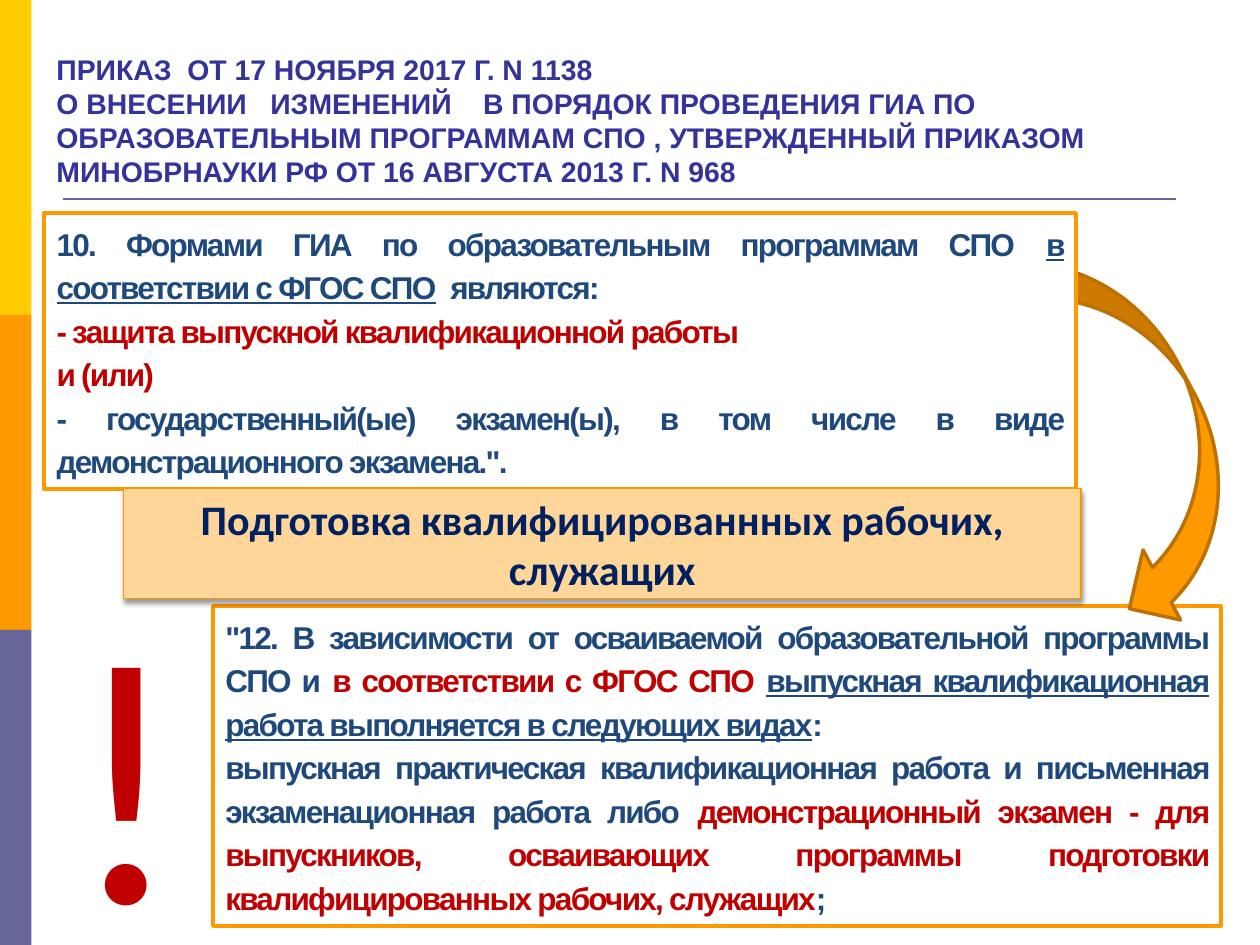
from lxml import etree
from pptx import Presentation
from pptx.dml.color import RGBColor
from pptx.enum.shapes import MSO_CONNECTOR, MSO_SHAPE
from pptx.enum.text import MSO_ANCHOR, PP_ALIGN
from pptx.oxml import parse_xml
from pptx.oxml.ns import nsdecls, qn
from pptx.util import Inches, Pt

BLUE, RED, ORANGE = "1F497D", "C00000", "FF9900"


def rgb(color):
    """Turn a hex string into a colour."""
    return RGBColor.from_string(color)


def add_box(s, box, fill, line=None, width=2, kind=MSO_SHAPE.RECTANGLE):
    """Add a filled preset shape without a shadow."""
    sp = s.shapes.add_shape(kind, *map(Inches, box))
    sp.shadow.inherit = False
    sp.fill.solid()
    sp.fill.fore_color.rgb = rgb(fill)
    if line:
        sp.line.color.rgb = rgb(line)
        sp.line.width = Pt(width)
    else:
        sp.line.fill.background()
    return sp


def add_run(p, text, size, color, font="Arial", bold=True, underline=False, spacing=0):
    """Add one formatted run to a paragraph."""
    r = p.add_run()
    r.text = text
    f = r.font
    f.name, f.size, f.bold = font, Pt(size), bold
    f.color.rgb = rgb(color)
    if underline:
        f.underline = True
    if spacing:
        r._r.get_or_add_rPr().set("spc", str(spacing * 100))


def add_text(s, box, anchor):
    """Add a wrapping text box and return its text frame."""
    tf = s.shapes.add_textbox(*map(Inches, box)).text_frame
    tf.word_wrap = True
    tf.vertical_anchor = anchor
    return tf


def add_sidebar(s, box, colors):
    """Stack equal colour bands in the box."""
    left, top, width, height = box
    step = height / len(colors)
    for i, color in enumerate(colors):
        add_box(s, (left, top + i * step, width, step), color)


def add_title(s, box, lines):
    """Add the heading and the rule below it."""
    ends = map(Inches, (0.5, 1.58, 9.33, 1.58))
    rule = s.shapes.add_connector(MSO_CONNECTOR.STRAIGHT, *ends)
    rule.line.color.rgb = rgb("666699")
    rule.line.width = Pt(1.5)
    etree.SubElement(rule._element.spPr, qn("a:effectLst"))
    p = add_text(s, box, MSO_ANCHOR.BOTTOM).paragraphs[0]
    for i, line in enumerate(lines):
        if i:
            p.add_line_break()
        add_run(p, line, 16.2, "333399")


def add_clause(s, box, paragraphs):
    """Add a framed clause with justified paragraphs of (text, colour, underline) runs."""
    tf = add_box(s, box, "FFFFFF", ORANGE).text_frame
    tf.word_wrap = True
    tf.vertical_anchor = MSO_ANCHOR.TOP
    for i, runs in enumerate(paragraphs):
        p = tf.add_paragraph() if i else tf.paragraphs[0]
        p.alignment = PP_ALIGN.JUSTIFY
        p.line_spacing = 1.15
        for text, color, underline in runs:
            add_run(p, text, 18, color, underline=underline, spacing=-1)


def add_arrow(s, box):
    """Add the curved arrow that joins the two clauses."""
    sp = add_box(s, box, ORANGE, "BD7100", kind=MSO_SHAPE.CURVED_DOWN_ARROW)
    sp.rotation = 61.8


def add_banner(s, box, text):
    """Add the shaded banner with a soft shadow."""
    sp = add_box(s, box, "FFD699", "F99600", 0.75)
    sp._element.spPr.find(qn("a:effectLst")).append(parse_xml(
        f'<a:outerShdw {nsdecls("a")} blurRad="{Pt(3.1)}" dist="{Pt(1.6)}" dir="5400000" '
        'rotWithShape="0"><a:srgbClr val="000000"><a:alpha val="38000"/></a:srgbClr>'
        '</a:outerShdw>'))
    tf = sp.text_frame
    tf.word_wrap = True
    tf.vertical_anchor = MSO_ANCHOR.MIDDLE
    p = tf.paragraphs[0]
    p.alignment = PP_ALIGN.CENTER
    add_run(p, text, 24, "002060", "Calibri")


def add_mark(s, box):
    """Add the large exclamation mark."""
    p = add_text(s, box, MSO_ANCHOR.MIDDLE).paragraphs[0]
    p.alignment = PP_ALIGN.CENTER
    add_run(p, "!", 199, RED, "Calibri", bold=False)


def main():
    """Build the slide and save it."""
    prs = Presentation()
    prs.slide_width, prs.slide_height = Inches(10), Inches(7.5)
    s = prs.slides.add_slide(prs.slide_layouts[6])
    add_sidebar(s, (0, 0, 0.25, 7.5), ("FFCC00", ORANGE, "666699"))
    add_title(s, (0.35, 0.29, 9.37, 1.25), (
        "ПРИКАЗ  ОТ 17 НОЯБРЯ 2017 Г. N 1138  ",
        "О ВНЕСЕНИИ   ИЗМЕНЕНИЙ    В ПОРЯДОК ПРОВЕДЕНИЯ ГИА ПО ОБРАЗОВАТЕЛЬНЫМ "
        "ПРОГРАММАМ СПО , УТВЕРЖДЕННЫЙ ПРИКАЗОМ  МИНОБРНАУКИ РФ ОТ 16 АВГУСТА "
        "2013 Г. N 968"))
    add_clause(s, (1.69, 4.81, 8, 2.54), (
        (('"12. В зависимости от осваиваемой образовательной программы СПО и ', BLUE, False),
         ("в соответствии с ФГОС СПО ", RED, False),
         ("выпускная квалификационная работа выполняется в следующих видах", BLUE, True),
         (":", BLUE, False)),
        (("выпускная практическая квалификационная работа и письменная экзаменационная "
          "работа либо ", BLUE, False),
         ("демонстрационный экзамен - для выпускников, осваивающих программы подготовки "
          "квалифицированных рабочих, служащих", RED, False),
         (";", BLUE, False))))
    add_arrow(s, (7.26, 2.74, 3.27, 1.26))
    add_clause(s, (0.35, 1.69, 8.19, 2.19), (
        (("10. Формами ГИА по образовательным программам СПО ", BLUE, False),
         ("в соответствии с ФГОС СПО", BLUE, True),
         ("  являются:", BLUE, False)),
        (("- защита выпускной квалификационной работы ", RED, False),),
        (("и (или)", RED, False),),
        (("- государственный(ые) экзамен(ы), в том числе в виде демонстрационного "
          'экзамена.".', BLUE, False),)))
    add_banner(s, (0.98, 3.88, 7.6, 0.87), "Подготовка квалифицированнных рабочих, служащих")
    add_mark(s, (0.3, 4.13, 1.41, 3.87))
    prs.save("out.pptx")


if __name__ == "__main__":
    main()
